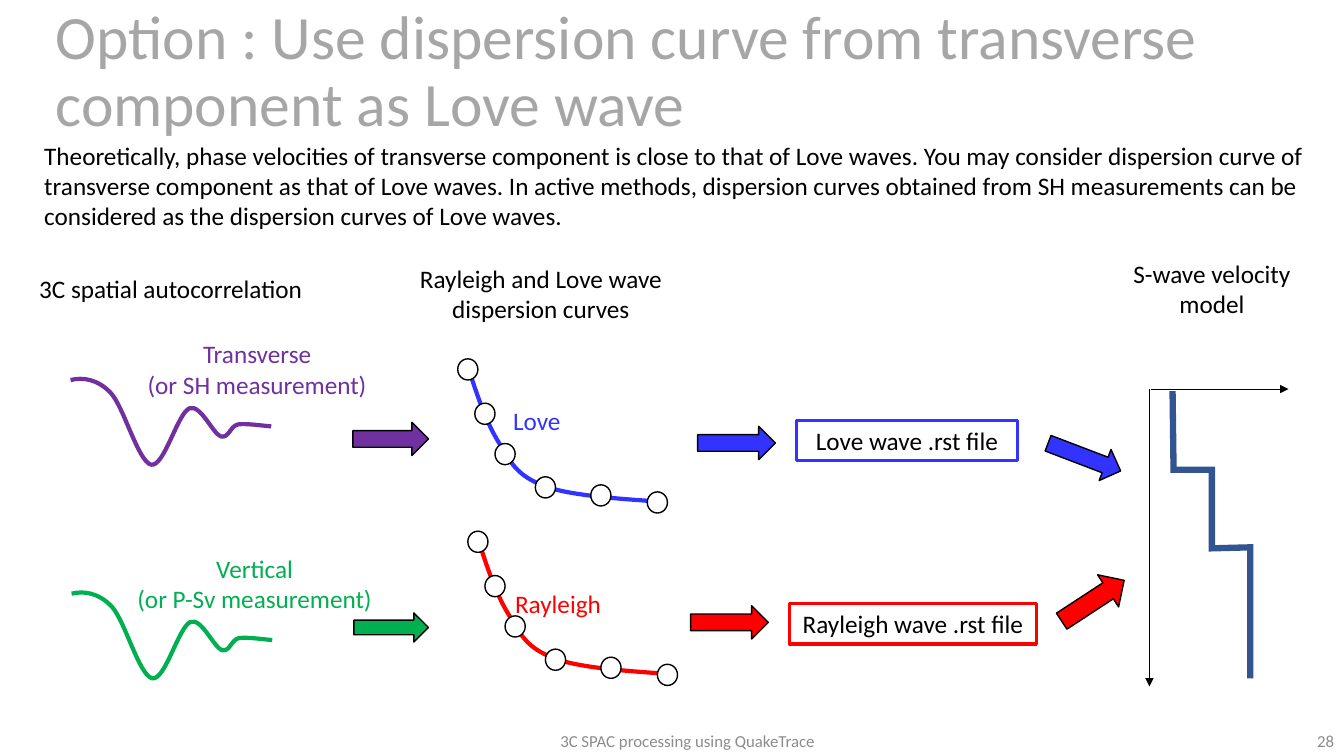
"""Build the slide on using transverse dispersion curves as Love wave curves."""
from lxml.etree import SubElement
from pptx import Presentation
from pptx.dml.color import RGBColor
from pptx.enum.shapes import MSO_CONNECTOR, MSO_SHAPE
from pptx.enum.text import MSO_ANCHOR, MSO_AUTO_SIZE, PP_ALIGN
from pptx.oxml.ns import qn
from pptx.util import Inches, Pt

COLORS = {
    "title": "A6A6A6", "footer": "8C8C8C", "black": "000000", "white": "FFFFFF",
    "transverse": "7030A0", "vertical": "00B050",
    "love": "3333FF", "rayleigh": "FF0000", "model": "325491",
}
LEFT, CENTER, RIGHT = PP_ALIGN.LEFT, PP_ALIGN.CENTER, PP_ALIGN.RIGHT


def write_text(box, text, color, align, size=18, anchor=MSO_ANCHOR.TOP):
    """Fill a shape with wrapped text in one style."""
    frame = box.text_frame
    frame.word_wrap = True
    frame.auto_size = MSO_AUTO_SIZE.NONE
    frame.vertical_anchor = anchor
    frame.text = text
    for para in frame.paragraphs:
        para.alignment = align
        para.font.name = "Calibri"
        para.font.size = Pt(size)
        para.font.color.rgb = RGBColor.from_string(COLORS[color])


def draw_path(shapes, points, color, width, curved=True, shift=(0, 0)):
    """Draw an open outline, reading each three further points as a cubic curve if curved."""
    places = [(Inches(x + shift[0]), Inches(y + shift[1])) for x, y in points]
    builder = shapes.build_freeform(*places[0])
    builder.add_line_segments(places[1:], close=False)
    outline = builder.convert_to_shape()
    outline.shadow.inherit = False
    outline.fill.background()
    outline.line.color.rgb = RGBColor.from_string(COLORS[color])
    outline.line.width = Pt(width)
    if curved:
        segments = list(outline._element.iter(qn("a:lnTo")))
        for first, second, third in zip(segments[::3], segments[1::3], segments[2::3]):
            first.tag = qn("a:cubicBezTo")
            for segment in (second, third):
                first.append(segment[0])
                segment.getparent().remove(segment)
    else:
        SubElement(outline.line._get_or_add_ln(), qn("a:miter"), lim="800000")


deck = Presentation()
deck.slide_width, deck.slide_height = Inches(13.33), Inches(7.5)
page = deck.slides.add_slide(deck.slide_layouts[5])

title = page.shapes.title
title.left, title.top, title.width, title.height = map(Inches, (0.45, 0, 11.78, 1.45))
write_text(title, "Option : Use dispersion curve from transverse component as Love wave",
           "title", LEFT, 44, MSO_ANCHOR.MIDDLE)
title.text_frame.paragraphs[0].line_spacing = 0.9

wave = [(0.7, 3.77), (0.82, 3.74), (0.97, 3.76), (1.1, 3.9),
        (1.23, 4.04), (1.37, 4.58), (1.5, 4.61), (1.63, 4.63), (1.76, 4.1), (1.88, 4.05),
        (1.99, 4.01), (2.11, 4.3), (2.19, 4.33), (2.27, 4.35), (2.28, 4.23), (2.36, 4.21),
        (2.45, 4.2), (2.57, 4.22), (2.69, 4.23)]
for color, shift in (("transverse", (0, 0)), ("vertical", (0.01, 2.12))):
    draw_path(page.shapes, wave, color, 3, shift=shift)

dispersion = [(4.64, 3.63), (4.73, 3.92), (4.83, 4.21), (4.96, 4.41),
              (5.08, 4.62), (5.15, 4.73), (5.42, 4.83), (5.69, 4.92), (6.15, 4.95), (6.6, 4.98)]
markers = [(4.54, 3.56), (4.71, 4), (4.91, 4.4), (5.31, 4.73), (5.86, 4.81), (6.42, 4.88)]
for color, shift in (("rayleigh", (0.1, 1.71)), ("love", (0, 0))):
    group = page.shapes.add_group_shape()
    draw_path(group.shapes, dispersion, color, 3, shift=shift)
    for x, y in markers:
        marker = group.shapes.add_shape(
            MSO_SHAPE.OVAL, Inches(x + shift[0]), Inches(y + shift[1]), Inches(0.2), Inches(0.21))
        marker.shadow.inherit = False
        marker.fill.solid()
        marker.fill.fore_color.rgb = RGBColor.from_string(COLORS["white"])
        marker.line.color.rgb = RGBColor.from_string(COLORS["black"])
        marker.line.width = Pt(1)

labels = [
    ("Theoretically, phase velocities of transverse component is close to that of Love waves. "
     "You may consider dispersion curve of transverse component as that of Love waves. "
     "In active methods, dispersion curves obtained from SH measurements can be considered "
     "as the dispersion curves of Love waves.", 0.34, 1.34, 12.71, 1.01, "black", LEFT),
    ("3C spatial autocorrelation", 0.29, 2.66, 3.07, 0.4, "black", LEFT),
    ("Rayleigh and Love wave dispersion curves", 3.88, 2.56, 2.97, 0.71, "black", CENTER),
    ("S-wave velocity model", 11.04, 2.51, 1.96, 0.71, "black", CENTER),
    ("Transverse\v(or SH measurement)", 1.31, 3.31, 2.48, 0.71, "transverse", CENTER),
    ("Vertical\n(or P-Sv measurement)", 1.22, 5.44, 2.61, 0.71, "vertical", CENTER),
    ("Love", 4.99, 3.97, 1.41, 0.4, "love", LEFT),
    ("Rayleigh", 5.01, 5.79, 1.41, 0.4, "rayleigh", LEFT),
]
for text, x, y, width, height, color, align in labels:
    box = page.shapes.add_textbox(Inches(x), Inches(y), Inches(width), Inches(height))
    write_text(box, text, color, align)

arrows = [
    ("transverse", 3.5, 4.19, 0.75, 0.33, 0),
    ("vertical", 3.51, 6.08, 0.74, 0.29, 0),
    ("love", 6.92, 4.23, 0.77, 0.33, 0),
    ("rayleigh", 6.85, 6.01, 0.77, 0.33, 0),
    ("love", 10.37, 4.37, 0.77, 0.33, 20.9),
    ("rayleigh", 10.47, 5.77, 0.74, 0.38, 326.8),
]
for color, x, y, width, height, rotation in arrows:
    arrow = page.shapes.add_shape(
        MSO_SHAPE.RIGHT_ARROW, Inches(x), Inches(y), Inches(width), Inches(height))
    arrow.rotation = rotation
    arrow.shadow.inherit = False
    arrow.fill.solid()
    arrow.fill.fore_color.rgb = RGBColor.from_string(COLORS[color])
    arrow.line.color.rgb = RGBColor.from_string(COLORS["black"])
    arrow.line.width = Pt(1)

files = [("Love wave .rst file", "love", 7.9, 4.17, 2.19),
         ("Rayleigh wave .rst file", "rayleigh", 7.83, 5.99, 2.45)]
for text, color, x, y, width in files:
    box = page.shapes.add_shape(
        MSO_SHAPE.RECTANGLE, Inches(x), Inches(y), Inches(width), Inches(0.4))
    box.shadow.inherit = False
    box.fill.background()
    box.line.color.rgb = RGBColor.from_string(COLORS[color])
    box.line.width = Pt(2.25)
    write_text(box, text, "black", CENTER)

for start_x, end_x, end_y in ((11.4, 11.4, 6.81), (11.42, 12.78, 3.86)):
    axis = page.shapes.add_connector(
        MSO_CONNECTOR.STRAIGHT, Inches(start_x), Inches(3.86), Inches(end_x), Inches(end_y))
    axis.line.color.rgb = RGBColor.from_string(COLORS["black"])
    axis.line.width = Pt(0.5)
    SubElement(axis.line._get_or_add_ln(), qn("a:tailEnd"), type="triangle")
    SubElement(axis._element.spPr, qn("a:effectLst"))

velocity_steps = [(11.63, 3.88), (11.64, 4.66), (12.02, 4.66),
                  (12.02, 5.44), (12.4, 5.43), (12.4, 6.73)]
draw_path(page.shapes, velocity_steps, "model", 4.5, curved=False)

for text, x, width, align in (("3C SPAC processing using QuakeTrace", 4.57, 4.5, CENTER),
                              ("28", 10.33, 3, RIGHT)):
    box = page.shapes.add_textbox(Inches(x), Inches(7.2), Inches(width), Inches(0.3))
    write_text(box, text, "footer", align, 12, MSO_ANCHOR.MIDDLE)

deck.save("out.pptx")
